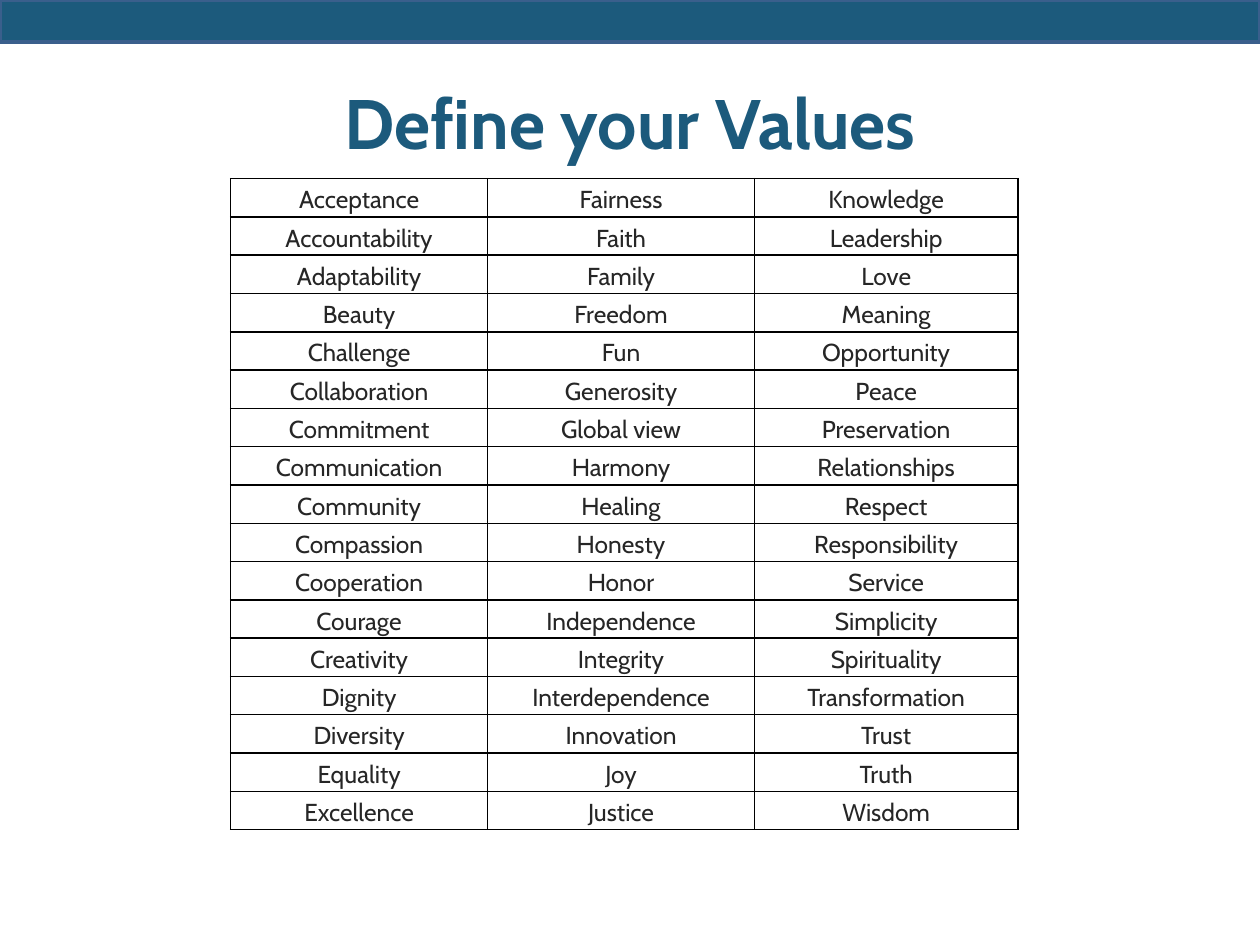
import pptx
import pptx.dml.color
import pptx.enum.shapes
import pptx.enum.text
import pptx.util
from lxml import etree
from pptx.oxml.ns import qn
from pptx.util import Cm

VALUES = [
    ["Acceptance", "Accountability", "Adaptability", "Beauty", "Challenge",
     "Collaboration", "Commitment", "Communication", "Community", "Compassion",
     "Cooperation", "Courage", "Creativity", "Dignity", "Diversity",
     "Equality", "Excellence"],
    ["Fairness", "Faith", "Family", "Freedom", "Fun", "Generosity",
     "Global view", "Harmony", "Healing", "Honesty", "Honor", "Independence",
     "Integrity", "Interdependence", "Innovation", "Joy", "Justice"],
    ["Knowledge", "Leadership", "Love", "Meaning", "Opportunity", "Peace",
     "Preservation", "Relationships", "Respect", "Responsibility", "Service",
     "Simplicity", "Spirituality", "Transformation", "Trust", "Truth",
     "Wisdom"],
]


def color(code):
    return pptx.dml.color.RGBColor.from_string(code)


class SlideBuilder:
    font = "Cabin"
    accent = "1C5A7C"
    bar_line = "3A5F8C"
    ink = "262626"
    border = "000000"

    def __init__(self, page):
        self.page = page

    def bar(self, left, top, width, height):
        bar = self.page.shapes.add_shape(
            pptx.enum.shapes.MSO_SHAPE.RECTANGLE, left, top, width, height)
        bar.shadow.inherit = False
        bar.fill.solid()
        bar.fill.fore_color.rgb = color(self.accent)
        bar.line.color.rgb = color(self.bar_line)
        bar.line.width = pptx.util.Pt(2)

    def centered_text(self, para, text, size, code, bold=False):
        para.text = text
        para.alignment = pptx.enum.text.PP_ALIGN.CENTER
        for span in para.runs:
            span.font.name = self.font
            span.font.size = pptx.util.Pt(size)
            span.font.bold = bold
            span.font.color.rgb = color(code)

    def title(self, text, left, top, width, height):
        box = self.page.shapes.add_textbox(left, top, width, height)
        frame = box.text_frame
        frame.word_wrap = True
        frame.vertical_anchor = pptx.enum.text.MSO_ANCHOR.MIDDLE
        self.centered_text(frame.paragraphs[0], text, 40, self.accent, bold=True)

    def table(self, columns, left, top, widths, height):
        table = self.page.shapes.add_table(
            len(columns[0]), len(columns), left, top, sum(widths), height).table
        table.first_row = table.horz_banding = False
        for column, width in zip(table.columns, widths):
            column.width = width
        for column_index, words in enumerate(columns):
            for row_index, word in enumerate(words):
                self.cell(table.cell(row_index, column_index), word)

    def cell(self, cell, text):
        cell.vertical_anchor = pptx.enum.text.MSO_ANCHOR.MIDDLE
        cell.margin_left = cell.margin_right = Cm(0.15)
        cell.margin_top = cell.margin_bottom = 0
        para = cell.text_frame.paragraphs[0]
        self.centered_text(para, text, 14, self.ink)
        para.line_spacing = 1.15
        para.space_after = pptx.util.Pt(10)
        cell.fill.background()
        # Borders come before the fill in the cell properties
        properties = cell._tc.get_or_add_tcPr()
        for index, side in enumerate(("a:lnL", "a:lnR", "a:lnT", "a:lnB")):
            line = etree.Element(qn(side), w=str(pptx.util.Pt(1)))
            fill = etree.SubElement(line, qn("a:solidFill"))
            etree.SubElement(fill, qn("a:srgbClr"), val=self.border)
            properties.insert(index, line)


def main():
    deck = pptx.Presentation()
    deck.slide_width, deck.slide_height = Cm(25.4), Cm(19.05)
    builder = SlideBuilder(deck.slides.add_slide(deck.slide_layouts[6]))

    # Top bar and heading
    builder.bar(0, 0, deck.slide_width, Cm(0.85))
    builder.title("Define your Values", Cm(1.27), Cm(0.85), Cm(22.86), Cm(3.18))

    # Grid of values, read down each column
    builder.table(VALUES, Cm(4.65), Cm(3.6),
                  [Cm(5.18), Cm(5.38), Cm(5.31)], Cm(13.13))

    deck.save("out.pptx")


if __name__ == "__main__":
    main()
